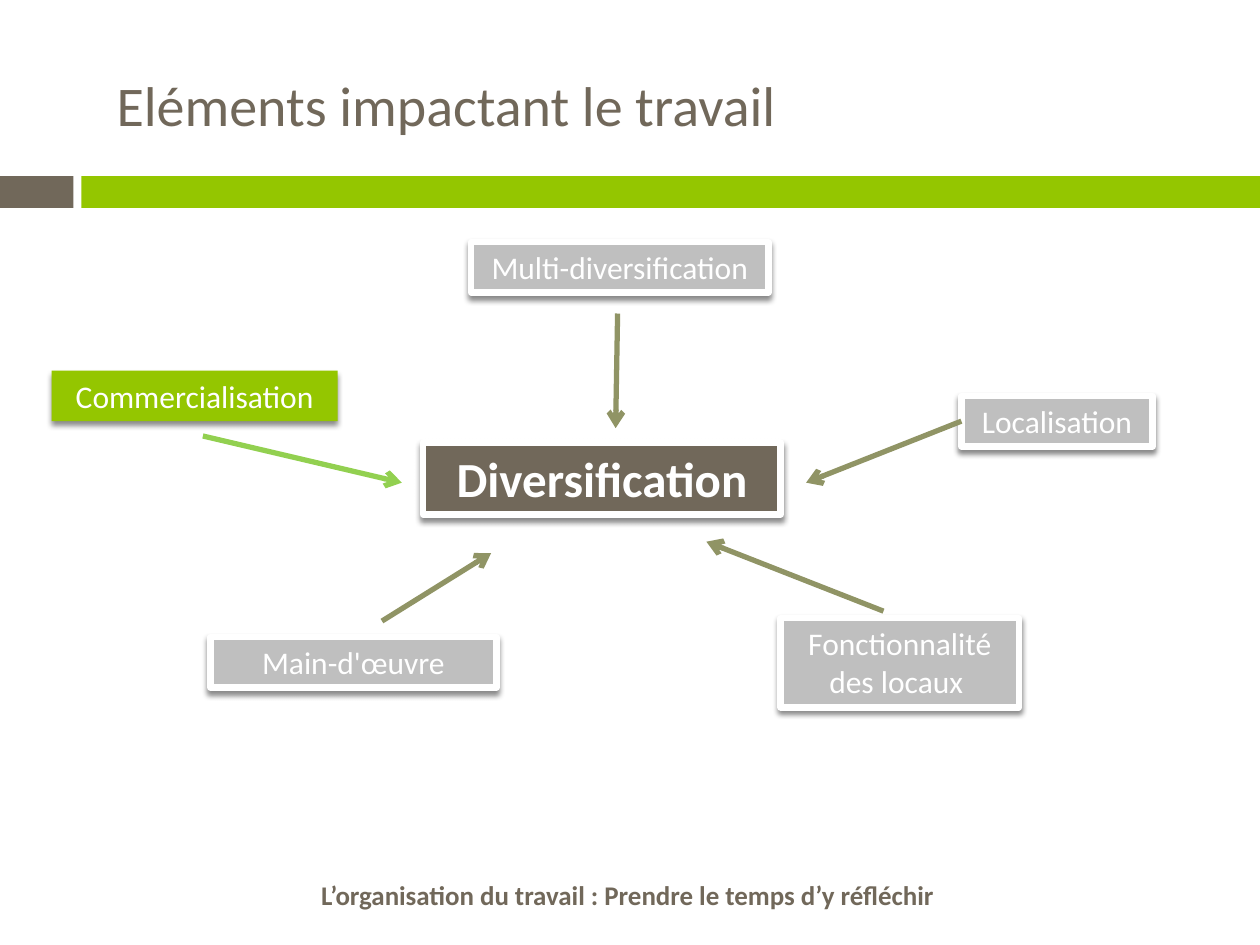
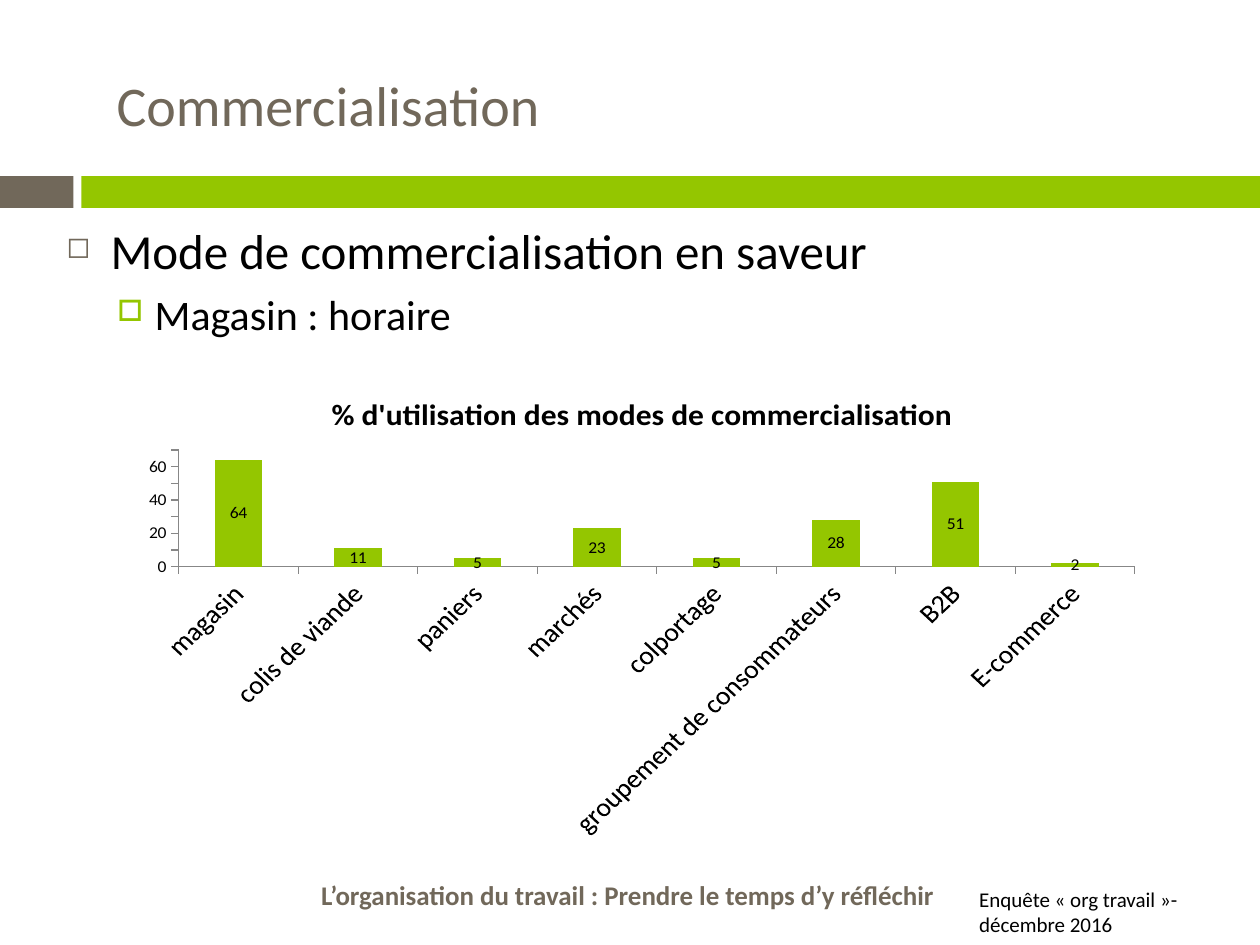
from dataclasses import dataclass
from typing import Optional

from lxml import etree
from pptx import Presentation
from pptx.chart.data import CategoryChartData
from pptx.dml.color import RGBColor
from pptx.enum.chart import XL_CHART_TYPE, XL_LABEL_POSITION, XL_TICK_MARK
from pptx.enum.shapes import MSO_CONNECTOR, MSO_SHAPE
from pptx.enum.text import MSO_ANCHOR, PP_ALIGN
from pptx.oxml.ns import qn
from pptx.util import Cm, Pt

# Shared style
FONT = "Calibri"
BROWN, GREEN, GREY = "71685A", "94C600", "BFBFBF"
OLIVE, LIGHT_GREEN = "909465", "92D050"
WHITE, BLACK, AXIS_GREY = "FFFFFF", "000000", "878787"
FOOTER = "L’organisation du travail : Prendre le temps d’y réfléchir"


@dataclass(frozen=True)
class Box:
    """Labelled rectangle, lengths in centimetres."""
    text: str
    x: float
    y: float
    w: float
    h: float = 1.02
    fill: str = GREY
    border: bool = True
    size: float = 18
    bold: bool = False


@dataclass(frozen=True)
class Arrow:
    """Straight arrow, lengths in centimetres."""
    x1: float
    y1: float
    x2: float
    y2: float
    color: str = OLIVE
    start: Optional[str] = None  # box whose left side it leaves


@dataclass(frozen=True)
class Bullet:
    text: str
    size: float
    level: int
    margin: float
    hanging: float
    before: float
    char: str
    color: str
    percent: int


BOXES = [
    Box("Diversification", 8.53, 8.92, 7.21, 1.45, BROWN, size=28, bold=True),
    Box("Localisation", 19.38, 7.98, 3.86),
    Box("Fonctionnalité des locaux ", 15.74, 12.46, 4.8, 1.8),
    Box("Multi-diversification", 9.5, 4.88, 5.99),
    Box("Main-d'œuvre", 4.24, 12.84, 5.77),
    Box("Commercialisation", 1.04, 7.47, 5.77, fill=GREEN, border=False),
]
ARROWS = [
    Arrow(17.81, 12.32, 14.24, 10.92),
    Arrow(12.45, 6.32, 12.41, 8.63),
    Arrow(19.38, 8.49, 16.25, 9.73, start="Localisation"),
    Arrow(7.7, 12.52, 9.9, 11.15),
    Arrow(4.09, 8.79, 8.1, 9.73, LIGHT_GREEN),
]
BULLETS = [
    Bullet("Mode de commercialisation en saveur", 28, 0, 0.89, 0.89, 0, "◻", BROWN, 60),
    Bullet("Magasin : horaire", 24, 1, 1.78, 0.76, 5.5, "□", GREEN, 70),
]
SALES_MODES = {
    "magasin": 64, "colis de viande": 11, "paniers": 5, "marchés": 23,
    "colportage": 5, "groupement de consommateurs": 28, "B2B": 51, "E-commerce": 2,
}


# Helpers
def rgb(color: str) -> RGBColor:
    return RGBColor.from_string(color)


def sub(parent, tag: str, **attrs):
    return etree.SubElement(parent, qn(tag), {k: str(v) for k, v in attrs.items()})


def style_font(font, size: float, color: str = BLACK, bold: bool = False) -> None:
    font.name, font.size, font.bold = FONT, Pt(size), bold
    font.color.rgb = rgb(color)


def add_run(p, text: str, size: float, color: str = BLACK, bold: bool = False) -> None:
    r = p.add_run()
    r.text = text
    style_font(r.font, size, color, bold)


def add_text_box(slide, x: float, y: float, w: float, h: float):
    tf = slide.shapes.add_textbox(Cm(x), Cm(y), Cm(w), Cm(h)).text_frame
    tf.word_wrap = True
    return tf


def add_rect(slide, x: float, y: float, w: float, h: float, fill: str):
    sp = slide.shapes.add_shape(MSO_SHAPE.RECTANGLE, Cm(x), Cm(y), Cm(w), Cm(h))
    sp.shadow.inherit = False
    sp.fill.solid()
    sp.fill.fore_color.rgb = rgb(fill)
    sp.line.fill.background()
    return sp


def add_box(slide, box: Box):
    sp = add_rect(slide, box.x, box.y, box.w, box.h, box.fill)
    if box.border:
        sp.line.color.rgb = rgb(WHITE)
        sp.line.width = Pt(3.75)
    effects = sp._element.spPr.find(qn("a:effectLst"))
    shadow = sub(effects, "a:outerShdw", blurRad=Pt(3), dist=Pt(2.4),
                 dir=5400000, rotWithShape=0)
    sub(sub(shadow, "a:srgbClr", val=BLACK), "a:alpha", val=45000)
    tf = sp.text_frame
    tf.word_wrap = True
    tf.vertical_anchor = MSO_ANCHOR.TOP
    p = tf.paragraphs[0]
    p.alignment = PP_ALIGN.CENTER
    add_run(p, box.text, box.size, WHITE, box.bold)
    return sp


def add_arrow(slide, arrow: Arrow, shapes: dict) -> None:
    cx = slide.shapes.add_connector(
        MSO_CONNECTOR.STRAIGHT, Cm(arrow.x1), Cm(arrow.y1), Cm(arrow.x2), Cm(arrow.y2))
    if arrow.start:
        cx.begin_connect(shapes[arrow.start], 1)
    cx.line.color.rgb = rgb(arrow.color)
    cx.line.width = Pt(3)
    sub(cx.line._get_or_add_ln(), "a:tailEnd", type="arrow")
    sub(cx._element.spPr, "a:effectLst")


def add_bullet(p, bullet: Bullet) -> None:
    p.level = bullet.level
    pPr = p._p.get_or_add_pPr()
    pPr.set("marL", str(Cm(bullet.margin)))
    pPr.set("indent", str(-Cm(bullet.hanging)))
    sub(sub(pPr, "a:buClr"), "a:srgbClr", val=bullet.color)
    sub(pPr, "a:buSzPct", val=bullet.percent * 1000)
    sub(pPr, "a:buChar", char=bullet.char)
    p.space_before = Pt(bullet.before)
    add_run(p, bullet.text, bullet.size)


def add_base_slide(prs, title: str):
    """Blank slide with bands, footer and title."""
    slide = prs.slides.add_slide(prs.slide_layouts[6])
    add_rect(slide, 0, 3.55, 1.48, 0.64, BROWN)
    add_rect(slide, 1.64, 3.55, 23.76, 0.64, GREEN)

    tf = add_text_box(slide, 0, 17.53, 25.3, 0.94)
    tf.vertical_anchor = MSO_ANCHOR.BOTTOM
    tf.margin_top = Cm(0.36)
    p = tf.paragraphs[0]
    p.alignment = PP_ALIGN.CENTER
    p.line_spacing = 0.7
    add_run(p, FOOTER, 15.4, BROWN, True)

    tf = add_text_box(slide, 2.1, 1.3, 22.4, 3.68)
    add_run(tf.paragraphs[0], title, 32, BROWN)
    return slide


def add_sales_chart(slide) -> None:
    data = CategoryChartData(number_format="0")
    data.categories = list(SALES_MODES)
    data.add_series("Series 1", list(SALES_MODES.values()))
    chart = slide.shapes.add_chart(
        XL_CHART_TYPE.COLUMN_CLUSTERED, Cm(2.59), Cm(7.52), Cm(20.7), Cm(9.4), data).chart
    style_font(chart.font, 10)
    chart.has_legend = False

    # Title
    chart.has_title = True
    title = chart.chart_title
    add_run(title.text_frame.paragraphs[0], "% d'utilisation des modes de commercialisation",
            18, bold=True)
    title._element.find(qn("c:overlay")).set("val", "1")

    # Columns and labels
    plot = chart.plots[0]
    plot.gap_width = 150
    plot.vary_by_categories = False
    series = plot.series[0]
    series.format.fill.solid()
    series.format.fill.fore_color.rgb = rgb(GREEN)
    labels = series.data_labels
    labels.show_value = True
    labels.position = XL_LABEL_POSITION.CENTER
    labels.number_format, labels.number_format_is_linked = "0", False
    style_font(labels.font, 10)

    # Axes
    for axis, size in ((chart.category_axis, 16), (chart.value_axis, 10)):
        axis.has_major_gridlines = False
        axis.major_tick_mark = XL_TICK_MARK.OUTSIDE
        axis.minor_tick_mark = XL_TICK_MARK.NONE
        axis.format.line.color.rgb = rgb(AXIS_GREY)
        style_font(axis.tick_labels.font, size)
    value_axis = chart.value_axis
    value_axis.minimum_scale, value_axis.maximum_scale = 0, 70
    value_axis.major_unit = 10
    value_axis.tick_labels.number_format = "0"
    value_axis.tick_labels.number_format_is_linked = False


# Slides
def build_factors(prs) -> None:
    slide = add_base_slide(prs, "Eléments impactant le travail")
    shapes = {box.text: add_box(slide, box) for box in BOXES}
    for arrow in ARROWS:
        add_arrow(slide, arrow, shapes)


def build_sales(prs) -> None:
    slide = add_base_slide(prs, "Commercialisation")
    tf = add_text_box(slide, 1.09, 4.32, 23.39, 13)
    for i, bullet in enumerate(BULLETS):
        add_bullet(tf.add_paragraph() if i else tf.paragraphs[0], bullet)
    tf = add_text_box(slide, 19.49, 17.74, 5.91, 1.27)
    add_run(tf.paragraphs[0], "Enquête « org travail »- décembre 2016", 12)
    add_sales_chart(slide)


def main() -> None:
    prs = Presentation()
    prs.slide_width, prs.slide_height = Cm(25.4), Cm(19.05)
    build_factors(prs)
    build_sales(prs)
    prs.save("out.pptx")


if __name__ == "__main__":
    main()
